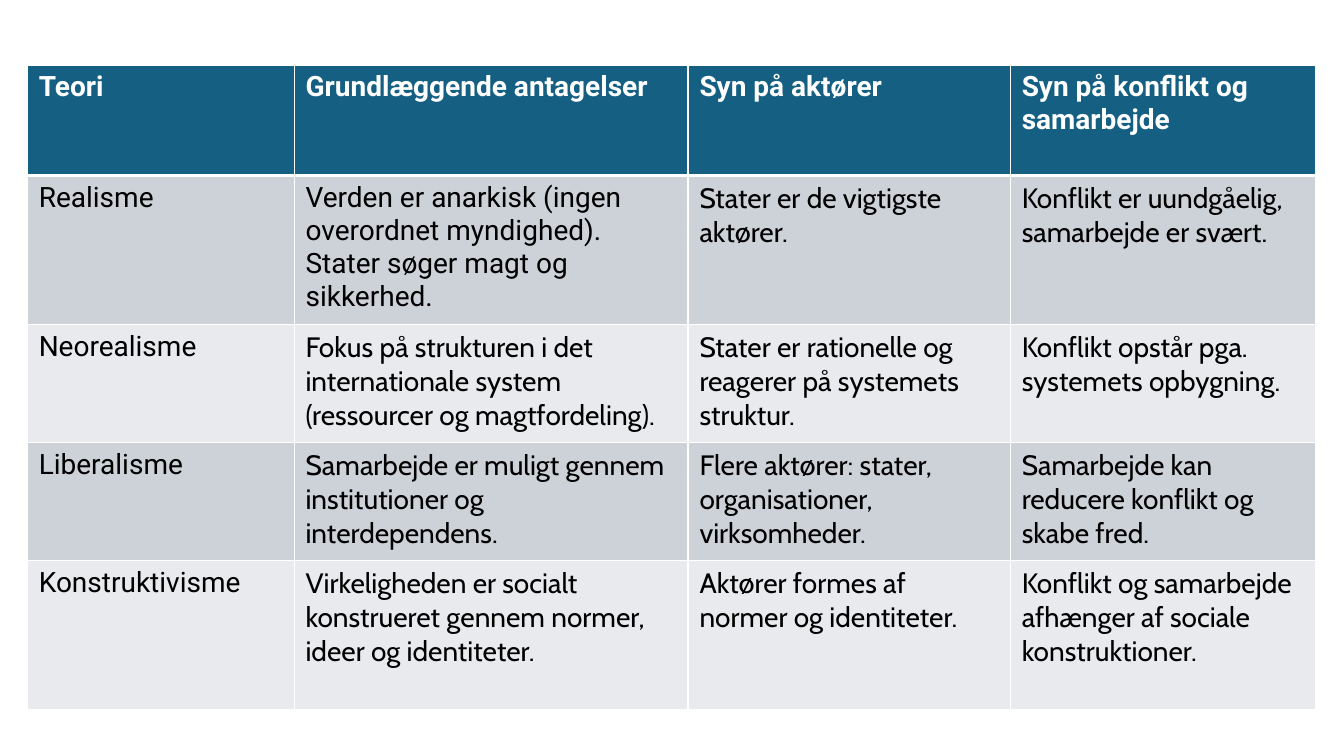
import dataclasses

import lxml.etree
import pptx
import pptx.dml.color
import pptx.oxml.ns
import pptx.table
import pptx.util

Pt = pptx.util.Pt


@dataclasses.dataclass(frozen=True)
class Theme:
    head: str = "156082"
    bands: tuple[str, str] = ("CCD2D8", "E8EAED")
    light: str = "FFFFFF"
    dark: str = "000000"
    main: str = "Roboto"
    alt: str = "Cabin"
    size: float = 20
    thin: float = 1
    thick: float = 3
    side: float = 8.2
    edge: float = 4.1


@dataclasses.dataclass(frozen=True)
class Row:
    height: float
    texts: tuple[str, str, str, str]
    roman: int = 1


THEME = Theme()
LEFT, TOP = 19.5, 46.4
WIDTHS = (190.6, 281.4, 230.2, 218.4)
ROWS = (
    Row(79, ("Teori", "Grundlæggende antagelser", "Syn på aktører",
             "Syn på konflikt og samarbejde"), 4),
    Row(106.5, ("Realisme",
                "Verden er anarkisk (ingen overordnet myndighed).\n"
                "Stater søger magt og sikkerhed.",
                "Stater er de vigtigste aktører.",
                "Konflikt er uundgåelig, samarbejde er svært."), 2),
    Row(84.3, ("Neorealisme",
               "Fokus på strukturen i det internationale system "
               "(ressourcer og magtfordeling).",
               "Stater er rationelle og reagerer på systemets struktur.",
               "Konflikt opstår pga. systemets opbygning.")),
    Row(84.3, ("Liberalisme",
               "Samarbejde er muligt gennem institutioner og interdependens.",
               "Flere aktører: stater, organisationer, virksomheder.",
               "Samarbejde kan reducere konflikt og skabe fred.")),
    Row(106.5, ("Konstruktivisme",
                "Virkeligheden er socialt konstrueret gennem normer, "
                "ideer og identiteter.",
                "Aktører formes af normer og identiteter.",
                "Konflikt og samarbejde afhænger af sociale konstruktioner.")),
)


def paint(hue: str) -> pptx.dml.color.RGBColor:
    return pptx.dml.color.RGBColor.from_string(hue)


def frame(cell: pptx.table._Cell, top: float, base: float) -> None:
    qn = pptx.oxml.ns.qn
    props = cell._tc.get_or_add_tcPr()
    sides = {"L": THEME.thin, "R": THEME.thin, "T": top, "B": base}
    for side, width in sides.items():
        line = lxml.etree.SubElement(props, qn(f"a:ln{side}"), w=str(Pt(width)))
        fill = lxml.etree.SubElement(line, qn("a:solidFill"))
        lxml.etree.SubElement(fill, qn("a:srgbClr"), val=THEME.light)


def write(cell: pptx.table._Cell, text: str, face: str, hue: str,
          bold: bool) -> None:
    para = cell.text_frame.paragraphs[0]
    for index, part in enumerate(text.split("\n")):
        if index:
            para.add_line_break()
        run = para.add_run()
        run.text = part
        run.font.name = face
        run.font.size = Pt(THEME.size)
        run.font.bold = bold
        run.font.color.rgb = paint(hue)


def fill_row(table: pptx.table.Table, index: int, row: Row) -> None:
    head = index == 0
    table.rows[index].height = Pt(row.height)
    top = THEME.thick if index == 1 else THEME.thin
    base = THEME.thick if head else THEME.thin
    for column, text in enumerate(row.texts):
        cell = table.cell(index, column)
        cell.margin_left = cell.margin_right = Pt(THEME.side)
        cell.margin_top = cell.margin_bottom = Pt(THEME.edge)
        frame(cell, top, base)
        cell.fill.solid()
        cell.fill.fore_color.rgb = paint(
            THEME.head if head else THEME.bands[(index - 1) % 2])
        face = THEME.main if column < row.roman else THEME.alt
        write(cell, text, face, THEME.light if head else THEME.dark, head)


def main() -> None:
    deck = pptx.Presentation()
    deck.slide_width, deck.slide_height = Pt(960), Pt(540)
    slide = deck.slides.add_slide(deck.slide_layouts[6])
    table = slide.shapes.add_table(
        len(ROWS), len(WIDTHS), Pt(LEFT), Pt(TOP),
        Pt(sum(WIDTHS)), Pt(sum(row.height for row in ROWS))).table
    for column, width in zip(table.columns, WIDTHS):
        column.width = Pt(width)
    for index, row in enumerate(ROWS):
        fill_row(table, index, row)
    deck.save("out.pptx")


if __name__ == "__main__":
    main()
